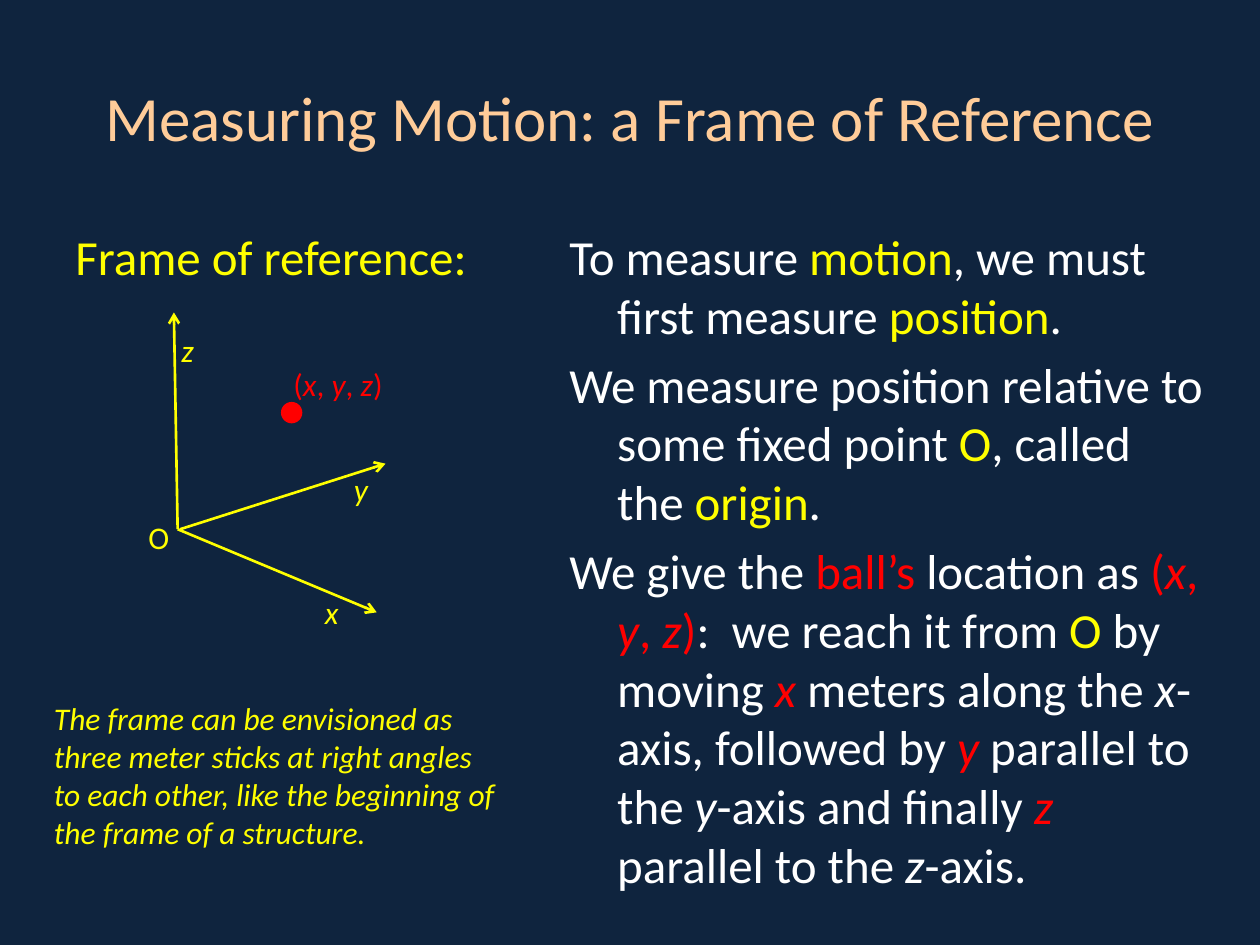
from typing import NamedTuple

from lxml import etree
from pptx import Presentation
from pptx.dml.color import RGBColor
from pptx.enum.shapes import MSO_CONNECTOR, MSO_SHAPE
from pptx.enum.text import MSO_ANCHOR, PP_ALIGN
from pptx.oxml.ns import qn
from pptx.util import Inches, Pt

STRAIGHT = MSO_CONNECTOR.STRAIGHT
OVAL = MSO_SHAPE.OVAL
TOP, MIDDLE = MSO_ANCHOR.TOP, MSO_ANCHOR.MIDDLE
LEFT, CENTER = PP_ALIGN.LEFT, PP_ALIGN.CENTER

NAVY, PEACH, WHITE = "0F243E", "FFCC99", "FFFFFF"
YELLOW, RED = "FFFF00", "FF0000"
FONT = "Calibri"
HANGING_INDENT = 0.38


class Run(NamedTuple):
    text: str
    color: str = WHITE
    italic: bool = False


class Box(NamedTuple):
    left: float
    top: float
    width: float
    height: float


class Axis(NamedTuple):
    start: tuple[float, float]
    end: tuple[float, float]


class Label(NamedTuple):
    box: Box
    runs: list[Run]


COORDINATES = [Run("(", RED), Run("x", RED, True), Run(", ", RED), Run("y", RED, True),
               Run(", ", RED), Run("z", RED, True), Run(")", RED)]

EXPLANATION = [
    [Run("To measure "), Run("motion", YELLOW), Run(", we must first measure "),
     Run("position", YELLOW), Run(".")],
    [Run("We measure position relative to some fixed point "), Run("O", YELLOW),
     Run(", called the "), Run("origin", YELLOW), Run(".")],
    [Run("We give the "), Run("ball’s", RED), Run(" location as "), *COORDINATES,
     Run(":  we reach it from "), Run("O", YELLOW), Run(" by moving "),
     Run("x", RED, True), Run(" meters along the "), Run("x", italic=True),
     Run("-axis, followed by "), Run("y", RED, True), Run(" parallel to the "),
     Run("y", italic=True), Run("-axis and finally "), Run("z", RED, True),
     Run(" parallel to the "), Run("z", italic=True), Run("-axis.")],
]

FRAME_NOTE = ("The frame can be envisioned as three meter sticks at right angles to each "
              "other, like the beginning of the frame of a structure.")

AXES = [
    Axis((1.41, 4.2), (1.38, 2.48)),
    Axis((1.41, 4.2), (2.99, 4.86)),
    Axis((1.43, 4.2), (3.06, 3.68)),
]

LABELS = [
    Label(Box(1.08, 4.06, 0.42, 0.4), [Run("O", YELLOW)]),
    Label(Box(2.48, 4.66, 0.42, 0.4), [Run("x", YELLOW, True)]),
    Label(Box(2.71, 3.68, 0.42, 0.4), [Run("y", YELLOW, True)]),
    Label(Box(1.34, 2.58, 0.42, 0.4), [Run("z", YELLOW, True)]),
    Label(Box(2.23, 2.85, 0.92, 0.4), COORDINATES),
]


def rgb(color: str) -> RGBColor:
    return RGBColor.from_string(color)


def add_text(slide, box: Box, paragraphs: list[list[Run]], size: float,
             align=LEFT, anchor=TOP, hanging: bool = False) -> None:
    """Add a text box; hanging paragraphs get an outdented first line and a gap above."""
    text_frame = slide.shapes.add_textbox(*map(Inches, box)).text_frame
    text_frame.word_wrap = True
    text_frame.vertical_anchor = anchor
    for index, runs in enumerate(paragraphs):
        paragraph = text_frame.add_paragraph() if index else text_frame.paragraphs[0]
        paragraph.alignment = align
        if hanging:
            paragraph.space_before = Pt(0.2 * size)
            properties = paragraph._p.get_or_add_pPr()
            properties.set("marL", str(Inches(HANGING_INDENT)))
            properties.set("indent", str(-Inches(HANGING_INDENT)))
        for part in runs:
            run = paragraph.add_run()
            run.text = part.text
            run.font.name = FONT
            run.font.size = Pt(size)
            run.font.italic = part.italic
            run.font.color.rgb = rgb(part.color)


def add_axis(slide, axis: Axis) -> None:
    connector = slide.shapes.add_connector(
        STRAIGHT, *map(Inches, axis.start + axis.end))
    connector.line.color.rgb = rgb(YELLOW)
    connector.line.width = Pt(1.5)
    etree.SubElement(connector.line._get_or_add_ln(), qn("a:tailEnd"), type="arrow")
    etree.SubElement(connector._element.spPr, qn("a:effectLst"))


def add_ball(slide, box: Box) -> None:
    ball = slide.shapes.add_shape(OVAL, *map(Inches, box))
    ball.shadow.inherit = False
    ball.fill.solid()
    ball.fill.fore_color.rgb = rgb(RED)
    ball.line.fill.background()


def main() -> None:
    presentation = Presentation()
    presentation.slide_width, presentation.slide_height = Inches(10), Inches(7.5)
    slide = presentation.slides.add_slide(presentation.slide_layouts[6])
    slide.background.fill.solid()
    slide.background.fill.fore_color.rgb = rgb(NAVY)

    add_text(slide, Box(0.5, 0.3, 9, 1.25),
             [[Run("Measuring Motion: a Frame of Reference", PEACH)]], 36, CENTER, MIDDLE)
    add_text(slide, Box(0.5, 1.75, 3.83, 4.95),
             [[Run("Frame of reference:", YELLOW)]], 28, hanging=True)
    add_text(slide, Box(4.42, 1.75, 5.25, 5.5), EXPLANATION, 28, hanging=True)
    add_text(slide, Box(0.33, 5.5, 3.75, 1.31), [[Run(FRAME_NOTE, YELLOW, True)]], 18)

    for axis in AXES:
        add_axis(slide, axis)
    add_ball(slide, Box(2.23, 3.19, 0.17, 0.17))
    for label in LABELS:
        add_text(slide, label.box, [label.runs], 18)

    presentation.save("out.pptx")


if __name__ == "__main__":
    main()
